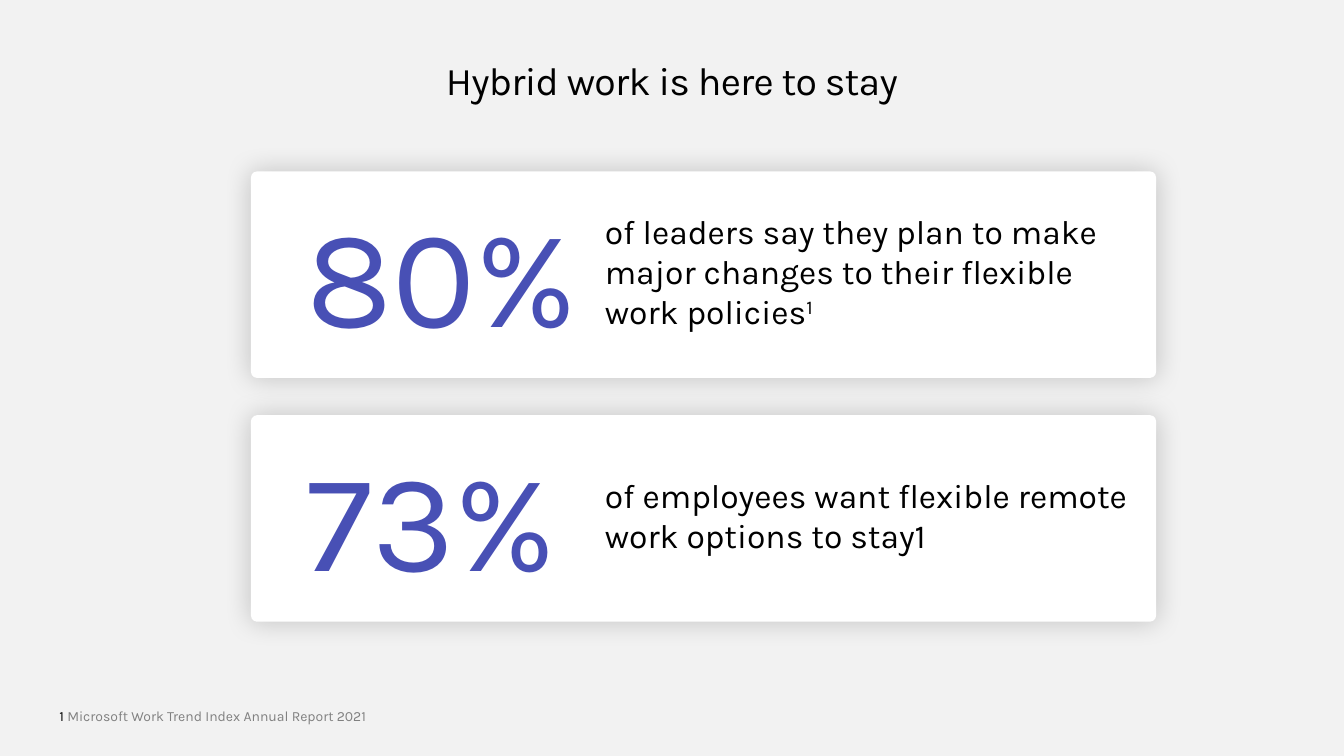
import pptx
import pptx.dml.color
import pptx.enum.shapes
import pptx.enum.text
import pptx.oxml
import pptx.oxml.ns
import pptx.util

RGBColor = pptx.dml.color.RGBColor
Align = pptx.enum.text.PP_ALIGN
Anchor = pptx.enum.text.MSO_ANCHOR

BACKGROUND = RGBColor(0xF2, 0xF2, 0xF2)
WHITE = RGBColor(0xFF, 0xFF, 0xFF)
BLACK = RGBColor(0x00, 0x00, 0x00)
GRAY = RGBColor(0x80, 0x80, 0x80)
INDIGO = RGBColor(0x48, 0x50, 0xB5)
FONT = "Karla"

# Grid: 100 columns by 100 rows
WIDTH = pptx.util.Inches(13.333)
HEIGHT = pptx.util.Inches(7.5)

CARD_LEFT, CARD_TOP, CARD_WIDTH, CARD_HEIGHT = 18.67, 22.67, 67.35, 27.33
CARD_PITCH = 32.25
LINE_ROWS = 5.38  # one line of caption text

# Percentage, caption, caption lines, superscript note mark
STATISTICS = [
    ("80%", "of leaders say they plan to make major changes to their "
            "flexible work policies", 3, "1"),
    ("73%", "of employees want flexible remote work options to stay1", 2, ""),
]


def grid(left, top, width, height):
    """Turn columns and rows into lengths on the slide."""
    return (int(WIDTH * left / 100), int(HEIGHT * top / 100),
            int(WIDTH * width / 100), int(HEIGHT * height / 100))


def apply(target, values):
    for name, value in values.items():
        setattr(target, name, value)


def set_frame(frame, margin=0, wrap=True, anchor=Anchor.TOP):
    apply(frame, {"word_wrap": wrap, "vertical_anchor": anchor,
                  "auto_size": pptx.enum.text.MSO_AUTO_SIZE.SHAPE_TO_FIT_TEXT})
    if margin is not None:
        sides = ("left", "top", "right", "bottom")
        apply(frame, {f"margin_{side}": margin for side in sides})


def add_span(para, text, size, color):
    span = para.add_run()
    span.text = text
    apply(span.font, {"name": FONT, "size": pptx.util.Pt(size), "bold": False})
    span.font.color.rgb = color
    return span


def add_text(page, place, spans, **frame_format):
    """Add a text box with one paragraph; spans are (text, size, color)."""
    box = page.shapes.add_textbox(*grid(*place))
    set_frame(box.text_frame, **frame_format)
    para = box.text_frame.paragraphs[0]
    para.alignment = Align.LEFT
    return [add_span(para, *span) for span in spans]


def add_title(page, text):
    title = page.shapes.title
    names = ("left", "top", "width", "height")
    apply(title, dict(zip(names, grid(4.8, 7.47, 90.38, 6.27))))
    set_frame(title.text_frame)
    para = title.text_frame.paragraphs[0]
    para.alignment = Align.CENTER
    span = add_span(para, text, 28, BLACK)
    span.font._element.set("spc", "-50")


def add_card(page, top):
    card = page.shapes.add_shape(
        pptx.enum.shapes.MSO_SHAPE.ROUNDED_RECTANGLE,
        *grid(CARD_LEFT, top, CARD_WIDTH, CARD_HEIGHT))
    card.adjustments[0] = 0.03
    card.fill.solid()
    card.fill.fore_color.rgb = WHITE
    card.line.fill.background()
    # Soft glow on all sides
    card.shadow.inherit = False
    effects = card._element.spPr.find(pptx.oxml.ns.qn("a:effectLst"))
    effects.append(pptx.oxml.parse_xml(
        f'<a:outerShdw {pptx.oxml.ns.nsdecls("a")} '
        f'blurRad="{pptx.util.Pt(20)}" dist="0" algn="ctr" rotWithShape="0">'
        '<a:srgbClr val="000000"><a:alpha val="20000"/></a:srgbClr>'
        '</a:outerShdw>'))


def add_statistic(page, top, percentage, caption, lines, mark):
    add_card(page, top)
    # Caption, centred on the card's height
    rows = lines * LINE_ROWS
    caption_top = top + (CARD_HEIGHT - rows) / 2 - 0.4
    spans = [(caption, 24, BLACK)]
    if mark:
        spans.append((mark, 24, BLACK))
    runs = add_text(page, (45, caption_top, 38.95, rows), spans)
    if mark:
        runs[-1].font._element.set("baseline", "30000")
    # Large percentage
    add_text(page, (22.8, top + 2.1, 20.4, 22.4),
             [(percentage, 100, INDIGO)], wrap=False)


def main():
    deck = pptx.Presentation()
    apply(deck, {"slide_width": WIDTH, "slide_height": HEIGHT})
    page = deck.slides.add_slide(deck.slide_layouts.get_by_name("Title Only"))
    page.background.fill.solid()
    page.background.fill.fore_color.rgb = BACKGROUND

    add_title(page, "Hybrid work is here to stay")

    # Statistic cards
    for index, statistic in enumerate(STATISTICS):
        add_statistic(page, CARD_TOP + index * CARD_PITCH, *statistic)

    # Citation
    add_text(page, (3.68, 92.93, 68.18, 3.6),
             [("1 ", 10, BLACK),
              ("Microsoft Work Trend Index Annual Report 2021", 10, GRAY)],
             margin=None)

    deck.save("out.pptx")


if __name__ == "__main__":
    main()
